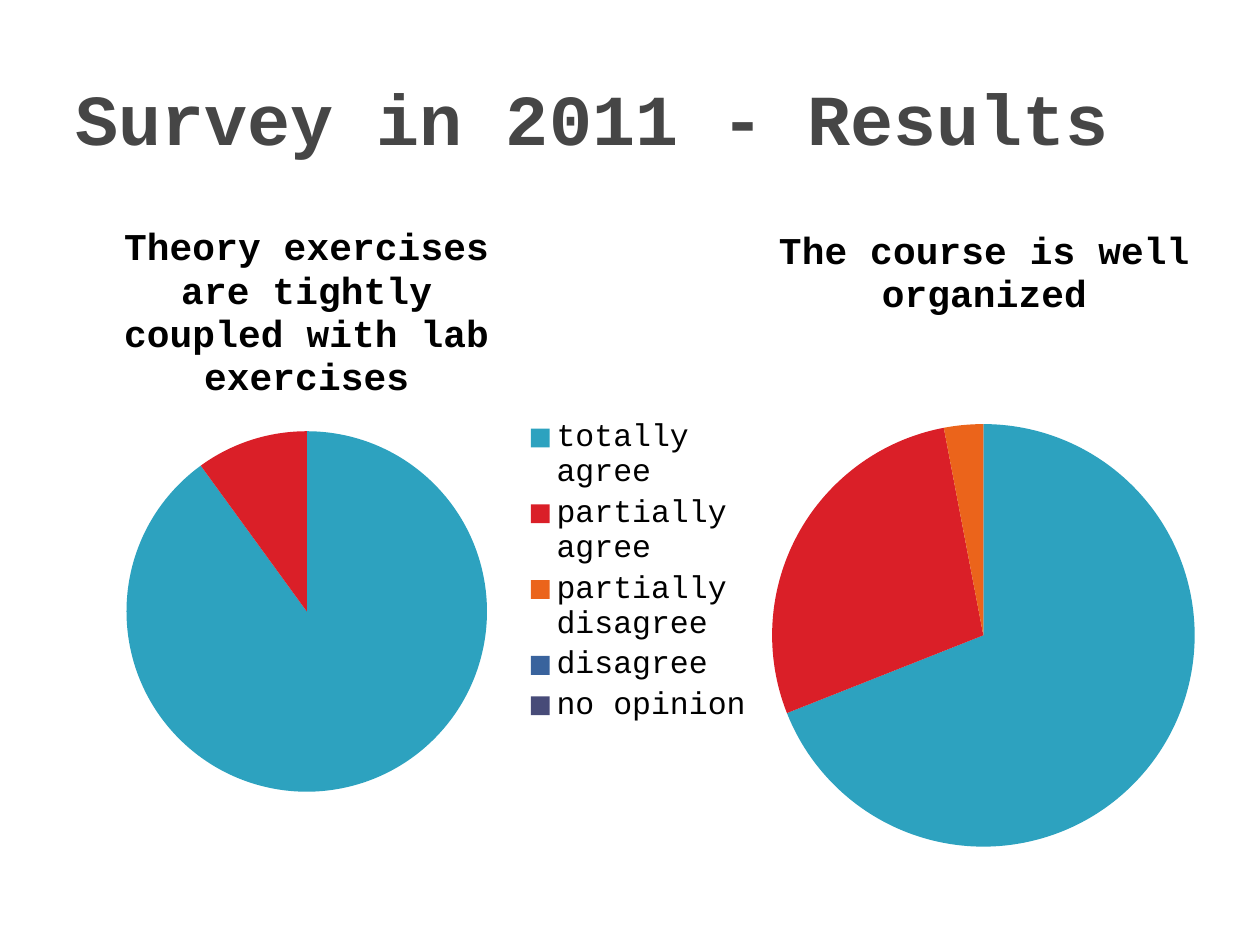
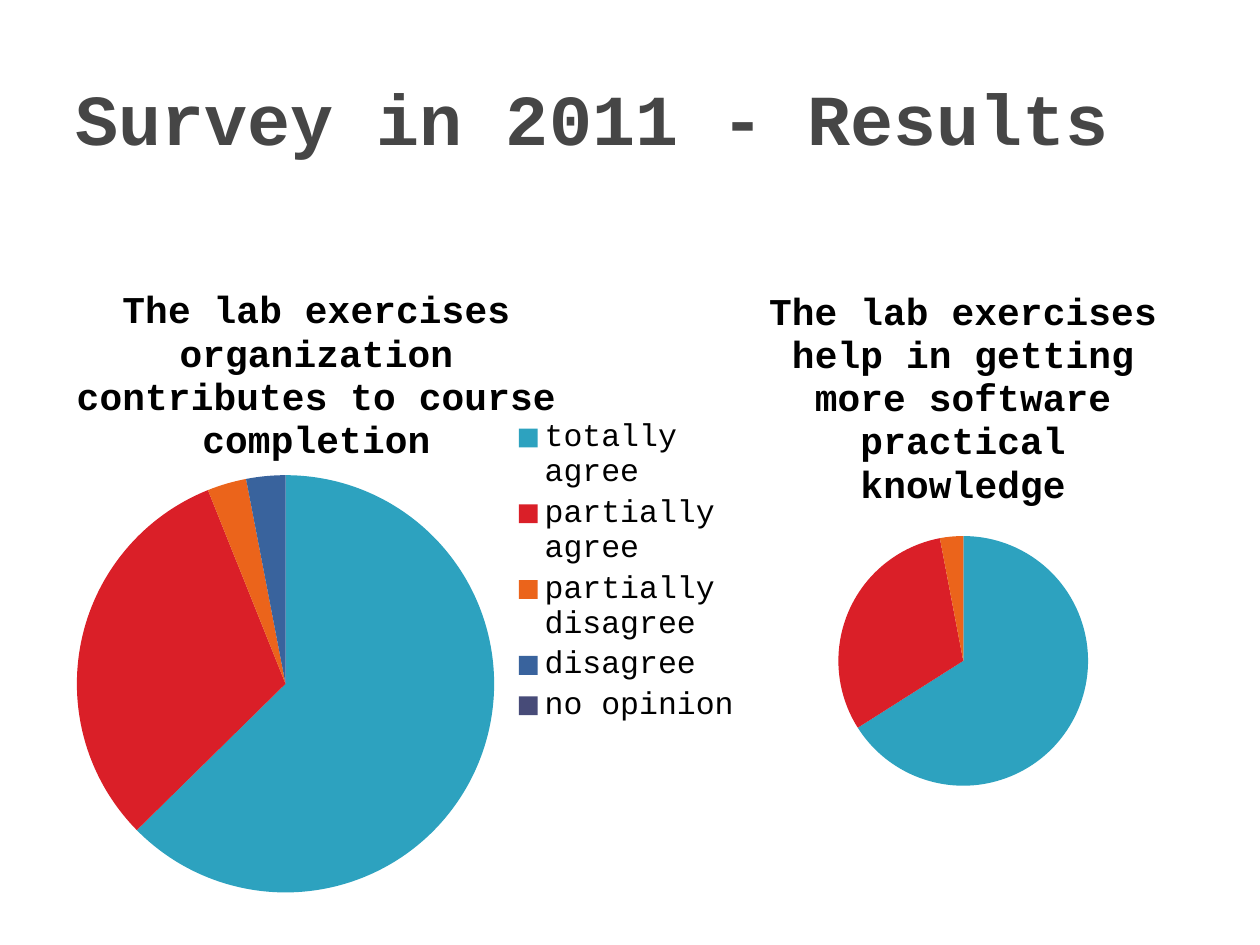
from lxml import etree
from pptx import Presentation
from pptx.chart.data import CategoryChartData
from pptx.dml.color import RGBColor
from pptx.enum.chart import XL_CHART_TYPE, XL_LEGEND_POSITION
from pptx.enum.text import MSO_ANCHOR, PP_ALIGN
from pptx.oxml.ns import qn
from pptx.util import Inches, Pt

PIE = XL_CHART_TYPE.PIE
LEGEND_SIDES = {"left": XL_LEGEND_POSITION.LEFT, "right": XL_LEGEND_POSITION.RIGHT}

# Shared look
FONT = "Courier New"
HEADING = "Survey in 2011 - Results"
HEADING_COLOR, TEXT_COLOR = "464646", "000000"
ANSWERS = ["totally agree", "partially agree", "partially disagree",
           "disagree", "no opinion"]
ANSWER_COLORS = ["2DA2BF", "DA1F28", "EB641B", "39639D", "474B78"]
LEGEND_TOP, LEGEND_WIDTH, LEGEND_HEIGHT = 0.29, 0.32, 0.42

# Each slide is a list of questions. "box" is in inches; "pie" (x, y, w, h),
# "title_at" (x, y) and the legend's x are shares of the chart's box.
SLIDES = [
    [
        {"question": "Theory exercises are tightly coupled with lab exercises",
         "shares": [90, 10, 0, 0, 0],
         "box": (0.5, 1.58, 3.87, 4.85),
         "pie": (0.13, 0.38, 0.74, 0.59)},
        {"question": "The course is well organized",
         "shares": [69, 28, 3, 0, 0],
         "box": (4.06, 1.58, 5.59, 5.92),
         "pie": (0.37, 0.3, 0.6, 0.57),
         "title_at": (0.37, 0.03),
         "legend": ("left", 0.02)},
    ],
    [
        {"question": "The lab exercises organization contributes to course completion",
         "shares": [62, 31, 3, 3, 0],
         "box": (0.5, 1.58, 5.52, 5.92),
         "pie": (0.02, 0.37, 0.6, 0.56),
         "title_at": (0.01, 0.11),
         "legend": ("right", 0.65)},
        {"question": "The lab exercises help in getting more software practical knowledge",
         "shares": [66, 31, 3, 0, 0],
         "box": (5.55, 2.1, 4.19, 4.31),
         "pie": (0.26, 0.5, 0.48, 0.46)},
    ],
]


def rgb(hex_color):
    return RGBColor.from_string(hex_color)


def style_font(font, size, color, bold=False):
    font.name, font.size, font.bold = FONT, Pt(size), bold
    font.color.rgb = rgb(color)


def place(part, position, index, inner=False):
    """Give a chart part a manual layout, as its child number index."""
    for old in part.findall(qn("c:layout")):
        part.remove(old)
    layout = etree.Element(qn("c:layout"))
    manual = etree.SubElement(layout, qn("c:manualLayout"))
    settings = [("layoutTarget", "inner")] if inner else []
    settings += [("xMode", "edge"), ("yMode", "edge")]
    settings += zip("xywh", position)
    for tag, value in settings:
        etree.SubElement(manual, qn(f"c:{tag}")).set("val", str(value))
    part.insert(index, layout)


def add_heading(slide):
    title = slide.shapes.title
    title.left, title.top, title.width, title.height = map(Inches, (0.5, 0.3, 9, 1.25))
    frame = title.text_frame
    frame.text = HEADING
    frame.vertical_anchor = MSO_ANCHOR.MIDDLE
    heading = frame.paragraphs[0]
    heading.alignment = PP_ALIGN.LEFT
    style_font(heading.font, 41, HEADING_COLOR, bold=True)


def add_question(slide, item):
    answers = CategoryChartData()
    answers.categories = ANSWERS
    answers.add_series("Series 1", item["shares"])
    chart = slide.shapes.add_chart(PIE, *map(Inches, item["box"]), answers).chart
    style_font(chart.font, 18, TEXT_COLOR)

    # Question above the pie
    chart.has_title = True
    question = chart.chart_title.text_frame
    question.text = item["question"]
    style_font(question.paragraphs[0].font, 21.6, TEXT_COLOR, bold=True)
    if "title_at" in item:
        place(chart.chart_title._element, item["title_at"], 1)

    # Slices
    plot = chart.plots[0]
    plot.vary_by_categories = True
    for number, color in enumerate(ANSWER_COLORS):
        fill = plot.series[0].points[number].format.fill
        fill.solid()
        fill.fore_color.rgb = rgb(color)
    place(chart._chartSpace.chart.plotArea, item["pie"], 0, inner=True)

    # Legend, shared by both pies of a slide
    chart.has_legend = "legend" in item
    if chart.has_legend:
        side, left = item["legend"]
        chart.legend.position = LEGEND_SIDES[side]
        chart.legend.include_in_layout = False
        place(chart.legend._element,
              (left, LEGEND_TOP, LEGEND_WIDTH, LEGEND_HEIGHT), 1)


def main():
    deck = Presentation()
    deck.slide_width, deck.slide_height = Inches(10), Inches(7.5)
    title_only = deck.slide_layouts[5]
    for questions in SLIDES:
        slide = deck.slides.add_slide(title_only)
        add_heading(slide)
        for item in questions:
            add_question(slide, item)
    deck.save("out.pptx")


if __name__ == "__main__":
    main()
